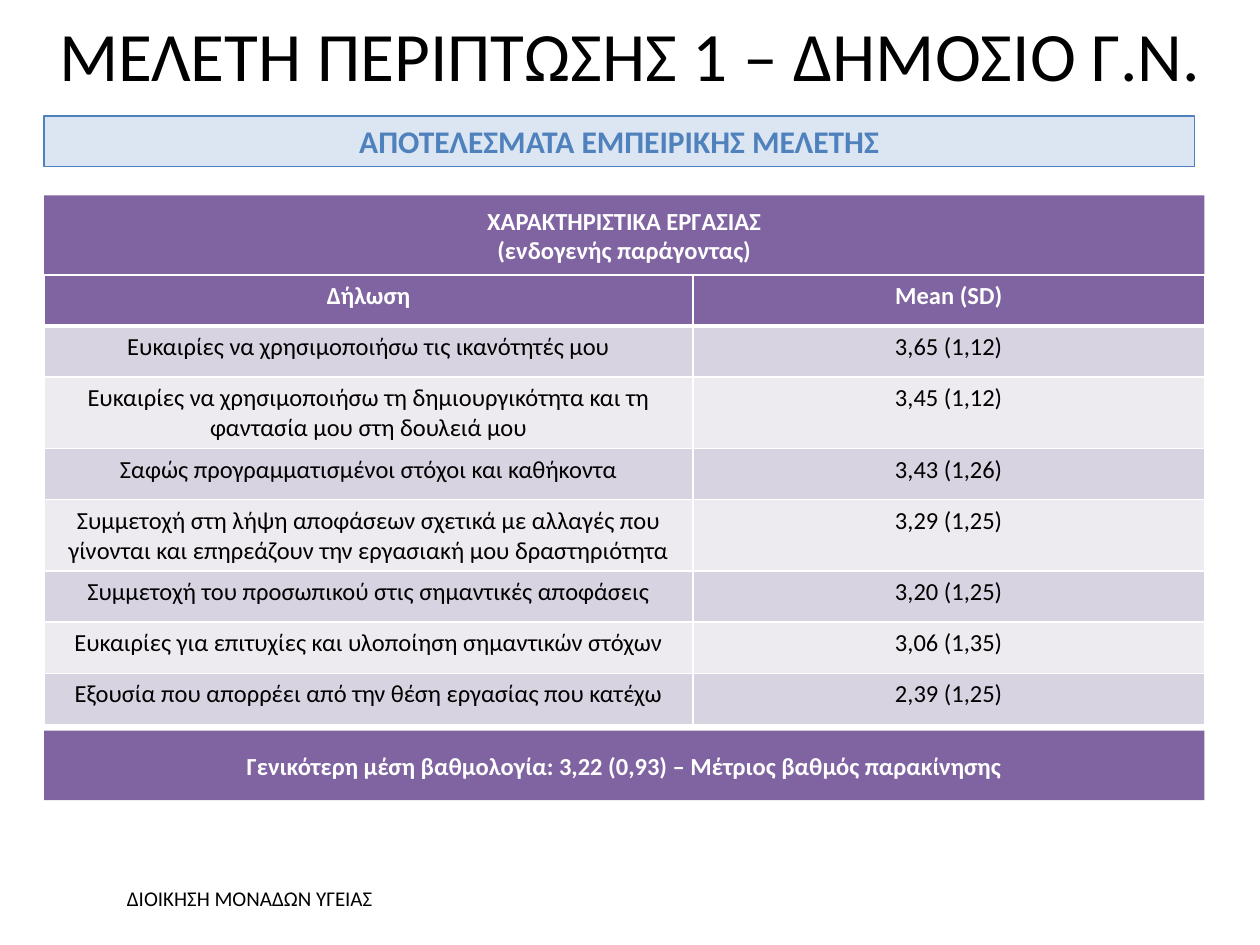
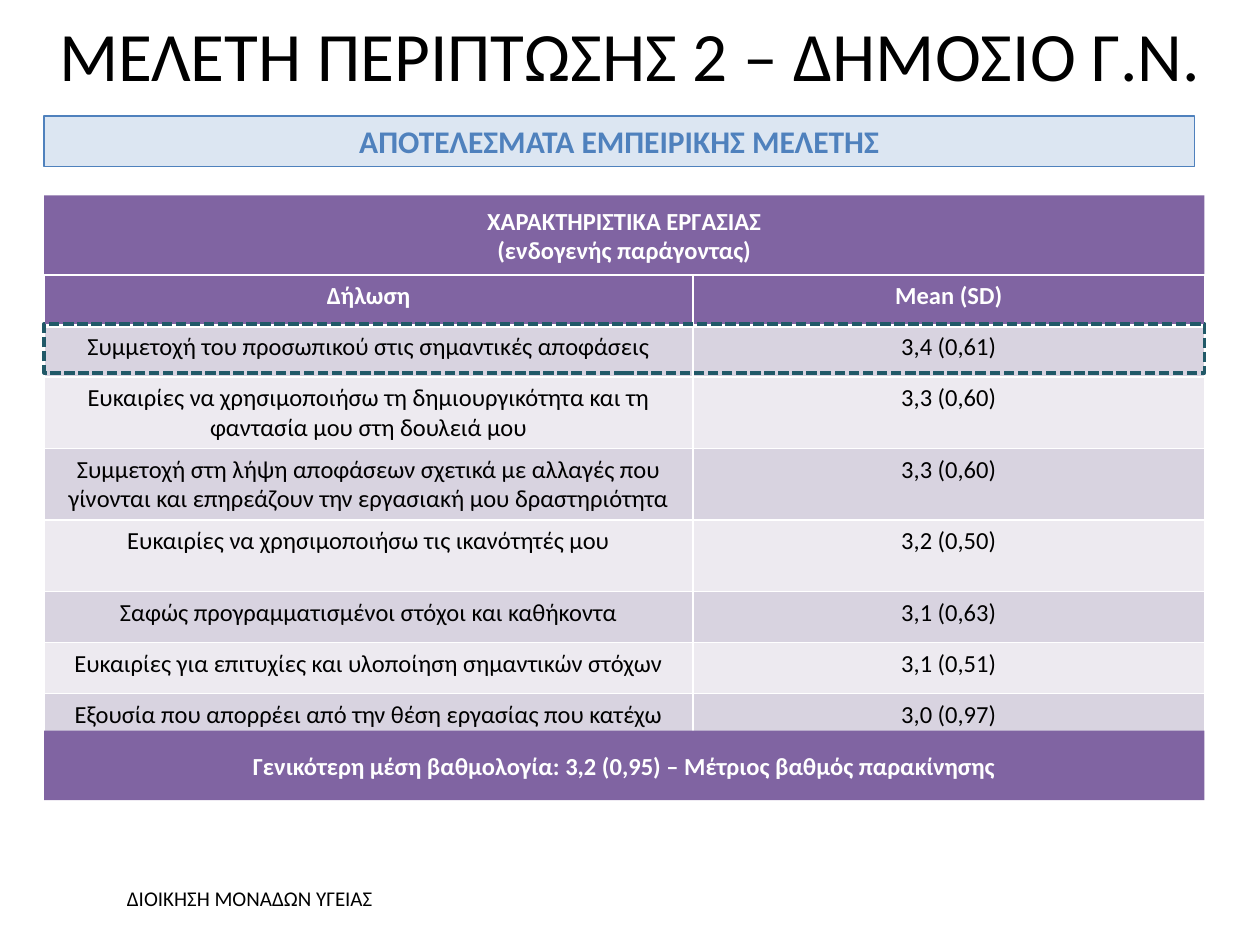
import lxml.etree
import pptx
import pptx.dml.color
import pptx.enum.dml
import pptx.enum.shapes
import pptx.enum.text
import pptx.oxml.ns
import pptx.util

Cm = pptx.util.Cm
Pt = pptx.util.Pt
qn = pptx.oxml.ns.qn
ALIGN = pptx.enum.text.PP_ALIGN
ANCHOR = pptx.enum.text.MSO_ANCHOR

WHITE, BLACK = "FFFFFF", "000000"
PURPLE, BLUE, PALE, TEAL = "8064A2", "4F81BD", "DCE6F2", "215968"
BANDS = ("D8D3E0", "EDEAF0")
LEFT, WIDTH = 0.89, 23.39
COLS = (13.08, 10.31)
TOP, ROW, TALL = 5.54, 1.03, 1.44

SKILLS = "Ευκαιρίες να χρησιμοποιήσω τις ικανότητές μου"
CREATE = "Ευκαιρίες να χρησιμοποιήσω τη δημιουργικότητα και τη φαντασία μου στη δουλειά μου"
GOALS = "Σαφώς προγραμματισμένοι στόχοι και καθήκοντα"
CHANGE = ("Συμμετοχή στη λήψη αποφάσεων σχετικά με αλλαγές που γίνονται "
          "και επηρεάζουν την εργασιακή μου δραστηριότητα")
STAFF = "Συμμετοχή του προσωπικού στις σημαντικές αποφάσεις"
SUCCESS = "Ευκαιρίες για επιτυχίες και υλοποίηση σημαντικών στόχων"
POWER = "Εξουσία που απορρέει από την θέση εργασίας που κατέχω"

HEAD = ("Δήλωση", "Mean (SD)")
FIRST = [(SKILLS, "3,65 (1,12)"), (CREATE, "3,45 (1,12)"), (GOALS, "3,43 (1,26)"),
         (CHANGE, "3,29 (1,25)"), (STAFF, "3,20 (1,25)"), (SUCCESS, "3,06 (1,35)"),
         (POWER, "2,39 (1,25)")]
SECOND = [(STAFF, "3,4 (0,61)"), (CREATE, "3,3 (0,60)"), (CHANGE, "3,3 (0,60)"),
          (SKILLS, "3,2 (0,50)"), (GOALS, "3,1 (0,63)"), (SUCCESS, "3,1 (0,51)"),
          (POWER, "3,0 (0,97)")]


def tint(code):
    return pptx.dml.color.RGBColor.from_string(code)


class Deck:
    """Holds the shared style and the current slide."""

    font = "Calibri"

    def __init__(self):
        self.file = pptx.Presentation()
        self.file.slide_width, self.file.slide_height = Cm(25.4), Cm(19.05)
        self.slide = None

    def start(self):
        self.slide = self.file.slides.add_slide(self.file.slide_layouts[6])

    def words(self, frame, text, size, color, bold=False, align=ALIGN.CENTER):
        frame.word_wrap = True
        for i, line in enumerate(text.split("\n")):
            para = frame.add_paragraph() if i else frame.paragraphs[0]
            para.text = line
            para.alignment = align
            font = para.font
            font.name, font.size, font.bold = self.font, Pt(size), bold
            font.color.rgb = tint(color)

    def label(self, box, text, size, align=ALIGN.CENTER, anchor=ANCHOR.TOP):
        frame = self.slide.shapes.add_textbox(*map(Cm, box)).text_frame
        frame.vertical_anchor = anchor
        self.words(frame, text, size, BLACK, align=align)

    def rect(self, box, fill=None, line=None, width=0.75):
        shape = self.slide.shapes.add_shape(
            pptx.enum.shapes.MSO_SHAPE.RECTANGLE, *map(Cm, box))
        shape.shadow.inherit = False
        if fill:
            shape.fill.solid()
            shape.fill.fore_color.rgb = tint(fill)
        else:
            shape.fill.background()
        if line:
            shape.line.color.rgb = tint(line)
            shape.line.width = Pt(width)
        else:
            shape.line.fill.background()
        return shape

    def band(self, top, high, text, size=14, color=WHITE, fill=PURPLE, line=None, wide=WIDTH):
        frame = self.rect((LEFT, top, wide, high), fill, line).text_frame
        frame.vertical_anchor = ANCHOR.MIDDLE
        self.words(frame, text, size, color, True)

    def frame(self, top, high):
        shape = self.rect((LEFT, top, WIDTH, high), line=TEAL, width=2)
        shape.line.dash_style = pptx.enum.dml.MSO_LINE.SQUARE_DOT

    def edge(self, cell, top, low):
        props = cell._tc.get_or_add_tcPr()
        sides = (("L", 1), ("R", 1), ("T", top), ("B", low))
        for i, (side, width) in enumerate(sides):
            line = lxml.etree.Element(qn(f"a:ln{side}"), w=str(Pt(width)))
            fill = lxml.etree.SubElement(line, qn("a:solidFill"))
            lxml.etree.SubElement(fill, qn("a:srgbClr"), val=WHITE)
            props.insert(i, line)

    def table(self, rows, tall):
        highs = [TALL if i in tall else ROW for i in range(len(rows))]
        grid = self.slide.shapes.add_table(
            len(rows), len(COLS), Cm(LEFT), Cm(TOP), Cm(WIDTH), Cm(sum(highs))).table
        for col, wide in zip(grid.columns, COLS):
            col.width = Cm(wide)
        for r, (row, high) in enumerate(zip(rows, highs)):
            grid.rows[r].height = Cm(high)
            head = r == 0
            for c, text in enumerate(row):
                cell = grid.cell(r, c)
                cell.fill.solid()
                cell.fill.fore_color.rgb = tint(PURPLE if head else BANDS[(r - 1) % 2])
                self.edge(cell, 3 if r == 1 else 1, 3 if head else 1)
                self.words(cell.text_frame, text, 14, WHITE if head else BLACK, head)

    def study(self, number, rows, tall, score, mark=False):
        self.start()
        self.label((2.31, 17.73, 19.81, 0.76), "ΔΙΟΙΚΗΣΗ ΜΟΝΑΔΩΝ ΥΓΕΙΑΣ", 12, ALIGN.LEFT)
        self.band(3.94, 1.6, "ΧΑΡΑΚΤΗΡΙΣΤΙΚΑ ΕΡΓΑΣΙΑΣ\n(ενδογενής παράγοντας)")
        self.table([HEAD, *rows], tall)
        self.band(14.73, 1.4,
                  f"Γενικότερη μέση βαθμολογία: {score} – Μέτριος βαθμός παρακίνησης")
        self.band(2.34, 1.02, "ΑΠΟΤΕΛΕΣΜΑΤΑ ΕΜΠΕΙΡΙΚΗΣ ΜΕΛΕΤΗΣ", 18, BLUE, PALE, BLUE, 23.19)
        if mark:
            self.frame(6.53, 0.99)
        self.label((0, 0, 25.4, 2.16), f"ΜΕΛΕΤΗ ΠΕΡΙΠΤΩΣΗΣ {number} – ΔΗΜΟΣΙΟ Γ.Ν.",
                   39.6, anchor=ANCHOR.MIDDLE)


def main():
    deck = Deck()
    deck.study(1, FIRST, (2, 4), "3,22 (0,93)")
    deck.study(2, SECOND, (2, 3, 4), "3,2 (0,95)", mark=True)
    deck.file.save("out.pptx")


if __name__ == "__main__":
    main()
